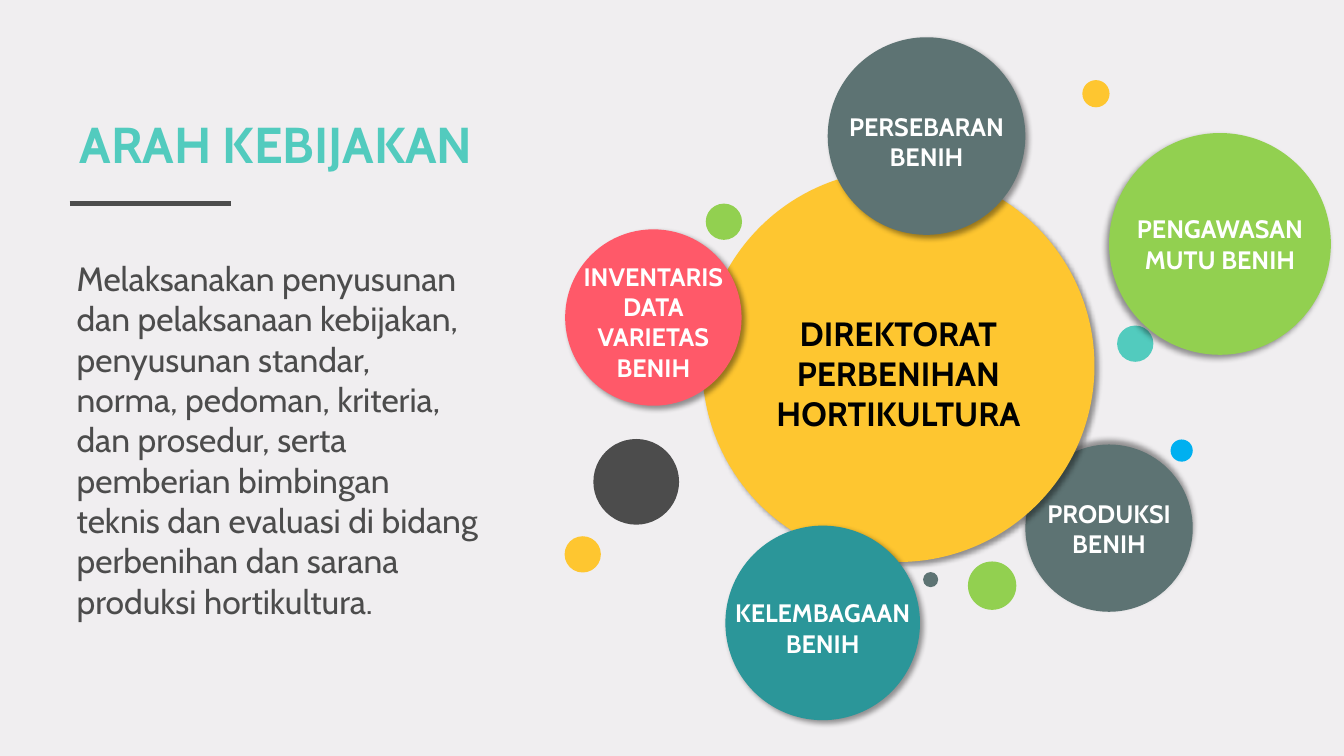
from lxml import etree
from pptx import Presentation, util as u
from pptx.dml.color import RGBColor
from pptx.enum import shapes, text
from pptx.oxml import ns

FONT = "Cabin"
DARK, TEAL, SLATE, YELLOW, GREEN = "4C4C4C", "52CBBE", "5D7373", "FEC630", "92D050"
TITLE = "ARAH KEBIJAKAN"
BODY = ("Melaksanakan penyusunan dan pelaksanaan kebijakan, penyusunan standar, "
        "norma, pedoman, kriteria, dan prosedur, serta pemberian bimbingan teknis "
        "dan evaluasi di bidang perbenihan dan sarana produksi hortikultura.")

# centre x, centre y, diameter, fill
DOTS = [
    (0.18, 5.2, 0.36, YELLOW), (0.71, 4.48, 0.85, DARK),
    (3.63, 5.45, 0.15, SLATE), (4.24, 5.51, 0.48, GREEN),
    (1.58, 1.9, 0.36, GREEN), (5.66, 3.11, 0.36, TEAL),
    (6.12, 4.17, 0.22, "00B0F0"), (5.27, 0.63, 0.27, YELLOW),
]
# centre x, centre y, diameter, fill, shadow angle, label drop, lines
BACK_BUBBLE = (5.4, 4.94, 1.66, SLATE, 270, 0, ["PRODUKSI", "BENIH"])
CORE = (3.31, 3.33, 3.89, YELLOW, 45, 0.07, ["DIREKTORAT PERBENIHAN HORTIKULTURA"])
FRONT_BUBBLES = [
    (6.5, 2.12, 2.2, GREEN, 135, 0, ["PENGAWASAN", "MUTU BENIH"]),
    (3.59, 1.05, 1.96, SLATE, 45, 0.05, ["PERSEBARAN", "BENIH"]),
    (0.88, 2.85, 1.75, "FF5969", 45, 0.04, ["INVENTARIS", "DATA", "VARIETAS", "BENIH"]),
    (2.56, 5.88, 1.93, "2B9699", 45, 0.05, ["KELEMBAGAAN", "BENIH"]),
]


def rgb(color):
    """Turn a hex string into a colour."""
    return RGBColor.from_string(color)


def place(sp, *box):
    """Move a shape to left, top, width, height in inches."""
    sp.left, sp.top, sp.width, sp.height = map(u.Inches, box)


def write(tf, lines, size, color, bold=False, align=text.PP_ALIGN.LEFT):
    """Fill a text frame with one paragraph per line."""
    tf.word_wrap = True
    tf.auto_size = text.MSO_AUTO_SIZE.NONE
    for i, line in enumerate(lines):
        p = tf.add_paragraph() if i else tf.paragraphs[0]
        p.alignment = align
        p.space_before = u.Pt(0)
        r = p.add_run()
        r.text = line
        r.font.name, r.font.size, r.font.bold = FONT, u.Pt(size), bold
        r.font.color.rgb = rgb(color)


def add_shadow(sp, angle):
    """Give a shape a soft black shadow cast at an angle."""
    effects = sp._element.spPr.find(ns.qn("a:effectLst"))
    shadow = etree.SubElement(effects, ns.qn("a:outerShdw"), blurRad=str(u.Pt(4)),
                              dist=str(u.Pt(3)), dir=str(angle * 60000), rotWithShape="0")
    black = etree.SubElement(shadow, ns.qn("a:srgbClr"), val="000000")
    etree.SubElement(black, ns.qn("a:alpha"), val="40000")


def add_circle(parent, box, x, y, size, color):
    """Draw a plain circle around a centre inside the box."""
    left, top = box[0] + x - size / 2, box[1] + y - size / 2
    sp = parent.shapes.add_shape(shapes.MSO_SHAPE.OVAL,
                                 *map(u.Inches, (left, top, size, size)))
    sp.shadow.inherit = False
    sp.fill.solid()
    sp.fill.fore_color.rgb = rgb(color)
    sp.line.fill.background()
    return sp


def add_bubble(s, box, bubble, size=18, color="FFFFFF"):
    """Draw a shadowed circle grouped with its label."""
    x, y, diameter, fill, angle, drop, lines = bubble
    group = s.shapes.add_group_shape()
    sp = add_circle(group, box, x, y, diameter, fill)
    add_shadow(sp, angle)
    label = group.shapes.add_textbox(sp.left, sp.top + u.Inches(drop), sp.width, sp.height)
    tf = label.text_frame
    tf.margin_left = tf.margin_right = u.Inches(0.05)
    tf.vertical_anchor = text.MSO_ANCHOR.MIDDLE
    write(tf, lines, size, color, True, text.PP_ALIGN.CENTER)


def add_diagram(s, box):
    """Build the bubble diagram from back to front."""
    add_bubble(s, box, BACK_BUBBLE)
    dots = s.shapes.add_group_shape()
    for dot in DOTS:
        add_circle(dots, box, *dot)
    add_bubble(s, box, CORE, 24, "000000")
    for bubble in FRONT_BUBBLES:
        add_bubble(s, box, bubble)


def add_policy(s, box):
    """Place the title, its rule and the policy text."""
    left, top, width, height = box
    title, body = s.shapes.title, s.placeholders[1]
    place(title, left + 0.03, top, 6.67, 0.71)
    place(body, left, top + 1.44, width, height - 1.44)
    for sp, line, size, color, bold in ((title, TITLE, 36, TEAL, True),
                                        (body, BODY, 24, DARK, False)):
        sp.text_frame.vertical_anchor = text.MSO_ANCHOR.TOP
        write(sp.text_frame, [line], size, color, bold)
    pPr = body.text_frame.paragraphs[0]._p.get_or_add_pPr()
    pPr.set("marL", "0")
    pPr.set("indent", "0")
    etree.SubElement(pPr, ns.qn("a:buNone"))
    ends = (left + 0.03, top + 0.95, left + 1.63, top + 0.95)
    rule = s.shapes.add_connector(shapes.MSO_CONNECTOR.STRAIGHT, *map(u.Inches, ends))
    rule.line.color.rgb = rgb(DARK)
    rule.line.width = u.Pt(3)
    etree.SubElement(rule._element.spPr, ns.qn("a:effectLst"))


def main():
    """Build and save the slide."""
    prs = Presentation()
    prs.slide_width, prs.slide_height = u.Inches(13.33), u.Inches(7.5)
    s = prs.slides.add_slide(prs.slide_layouts[1])
    s.background.fill.solid()
    s.background.fill.fore_color.rgb = rgb("F0EEF0")
    add_policy(s, (0.66, 1.07, 4.18, 5.58))
    add_diagram(s, (5.6, 0.3, 7.6, 6.9))
    prs.save("out.pptx")


if __name__ == "__main__":
    main()
